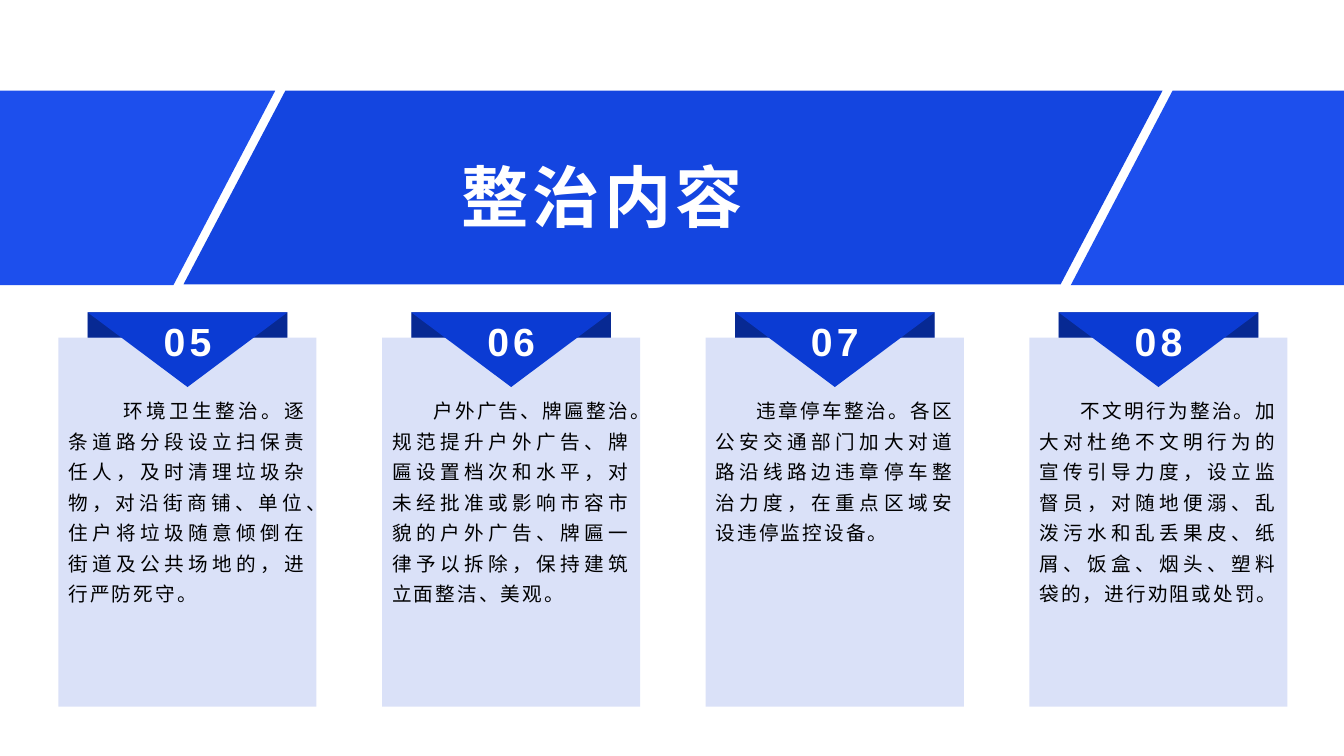
from lxml import etree
from pptx import Presentation
from pptx.dml.color import RGBColor
from pptx.enum import shapes, text
from pptx.oxml.ns import qn
from pptx.util import Inches, Pt

COLOURS = {
    "band": "1445E0",
    "band_side": "1D4FED",
    "card": "0B3BD3",
    "black": "000000",
    "white": "FFFFFF",
}
CARD_LEFT = 0.58
CARD_STEP = 3.21
CARDS = [
    ("05", 0.55, "环境卫生整治。逐条道路分段设立扫保责任人，及时清理垃圾杂物，对沿街商铺、单位、住户将垃圾随意倾倒在街道及公共场地的，进行严防死守。"),
    ("06", 0.41, "户外广告、牌匾整治。规范提升户外广告、牌匾设置档次和水平，对未经批准或影响市容市貌的户外广告、牌匾一律予以拆除，保持建筑立面整洁、美观。"),
    ("07", 0.41, "违章停车整治。各区公安交通部门加大对道路沿线路边违章停车整治力度，在重点区域安设违停监控设备。"),
    ("08", 0.41, "不文明行为整治。加大对杜绝不文明行为的宣传引导力度，设立监督员，对随地便溺、乱泼污水和乱丢果皮、纸屑、饭盒、烟头、塑料袋的，进行劝阻或处罚。"),
]


def paint(shape, colour, opacity=100):
    shape.shadow.inherit = False
    shape.line.fill.background()
    shape.fill.solid()
    shape.fill.fore_color.rgb = RGBColor.from_string(COLOURS[colour])
    if opacity < 100:
        colour_element = shape._element.spPr.find(qn("a:solidFill"))[0]
        etree.SubElement(colour_element, qn("a:alpha"), val=str(opacity * 1000))


def add_preset(slide, kind, box, colour, opacity=100):
    shape = slide.shapes.add_shape(kind, *map(Inches, box))
    paint(shape, colour, opacity)
    return shape


def add_polygon(slide, points, colour):
    corners = [(Inches(x), Inches(y)) for x, y in points]
    builder = slide.shapes.build_freeform(*corners[0], scale=1.0)
    builder.add_line_segments(corners[1:], close=True)
    paint(builder.convert_to_shape(), colour)


def add_text(slide, box, wording, size, colour, alignment, bold=False,
             tracking=3, line_spacing=1.0, indent=0,
             anchor=text.MSO_ANCHOR.TOP):
    frame = slide.shapes.add_textbox(*map(Inches, box)).text_frame
    frame.word_wrap = True
    frame.vertical_anchor = anchor
    paragraph = frame.paragraphs[0]
    paragraph.text = wording
    paragraph.alignment = alignment
    paragraph.line_spacing = line_spacing
    paragraph.font.name = "Arial"
    paragraph.font.size = Pt(size)
    paragraph.font.bold = bold
    paragraph.font.color.rgb = RGBColor.from_string(COLOURS[colour])
    properties = paragraph._p.get_or_add_pPr()
    properties.set("indent", str(Inches(indent)))
    properties.find(qn("a:defRPr")).set("spc", str(int(tracking * 100)))


def add_banner(slide):
    top, bottom = 0.9, 2.83
    middle = add_preset(slide, shapes.MSO_SHAPE.PARALLELOGRAM,
                        (1.82, top, 9.71, 1.92), "band")
    middle.adjustments[0] = 0.526
    add_polygon(slide, [(11.63, top), (13.38, top), (13.38, bottom),
                        (10.62, bottom)], "band_side")
    add_polygon(slide, [(-0.04, top), (2.73, top), (1.72, bottom),
                        (-0.04, bottom)], "band_side")
    add_text(slide, (4.48, 1.17, 4.37, 1.01), "整治内容", 48, "white",
             text.PP_ALIGN.JUSTIFY, bold=True, line_spacing=1.4)


def add_card(slide, left, number, indent, wording):
    rectangle = shapes.MSO_SHAPE.RECTANGLE
    tab_left, tab_top, tab_width = left + 0.29, 3.1, 1.98
    tab = (tab_left, tab_top, tab_width, 0.25)
    add_preset(slide, rectangle, tab, "card")
    add_preset(slide, rectangle, tab, "black", 30)
    add_polygon(slide, [(tab_left, tab_top), (tab_left + tab_width, tab_top),
                        (tab_left + tab_width / 2, 3.84)], "card")
    add_preset(slide, rectangle, (left, 3.35, 2.56, 3.66), "card", 15)
    add_text(slide, (left + 0.84, 3.04, 0.88, 0.69), number, 28, "white",
             text.PP_ALIGN.CENTER, bold=True, anchor=text.MSO_ANCHOR.MIDDLE)
    add_text(slide, (left, 3.84, 2.56, 3.16), wording, 14, "black",
             text.PP_ALIGN.JUSTIFY, tracking=1.5, line_spacing=1.3,
             indent=indent)


def main():
    presentation = Presentation()
    presentation.slide_width = Inches(13.33)
    presentation.slide_height = Inches(7.5)
    slide = presentation.slides.add_slide(presentation.slide_layouts[6])
    add_banner(slide)
    for index, card in enumerate(CARDS):
        add_card(slide, CARD_LEFT + index * CARD_STEP, *card)
    presentation.save("out.pptx")


if __name__ == "__main__":
    main()
